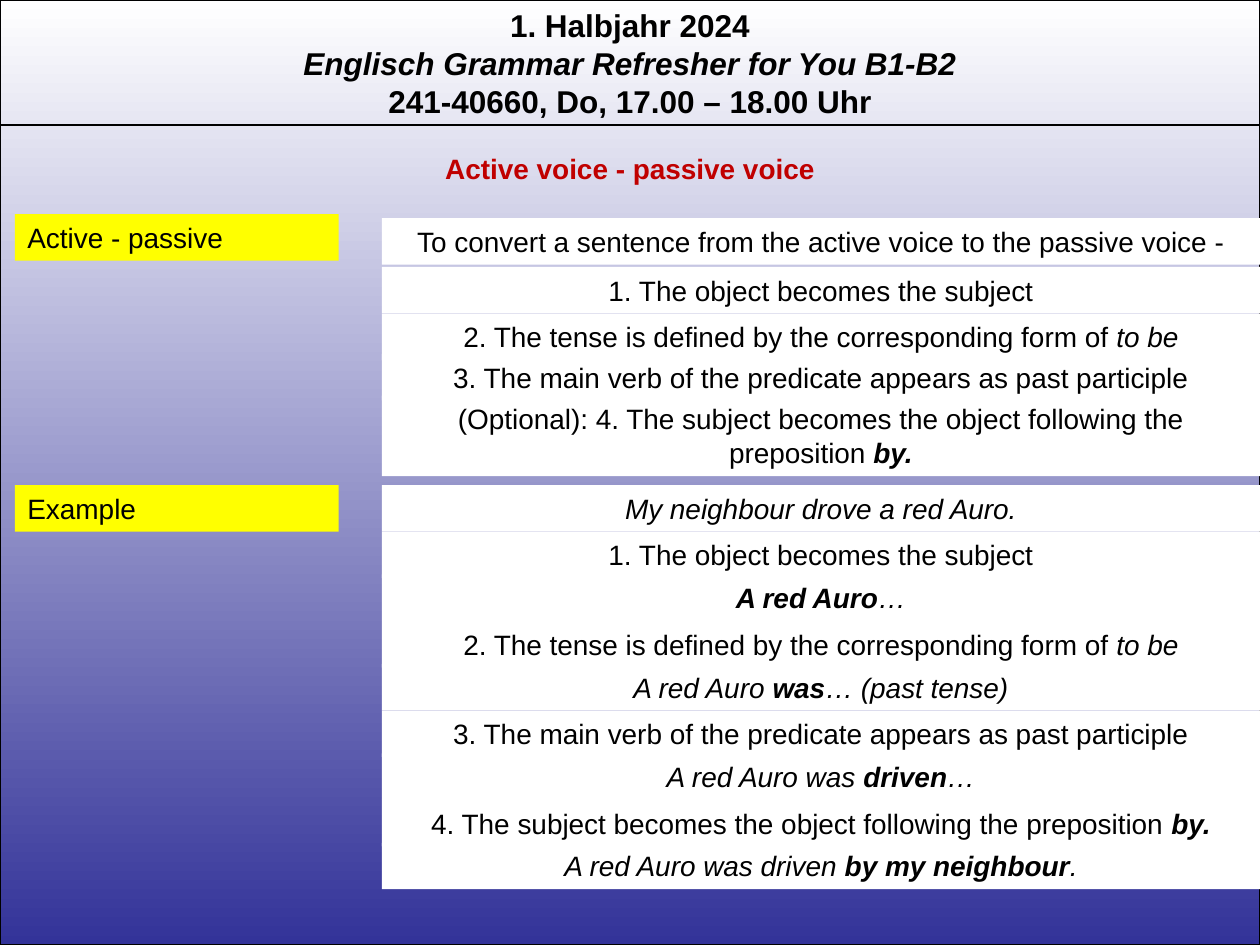
import pptx
import pptx.util
import pptx.dml.color
import pptx.enum.shapes
import pptx.enum.text
from lxml import etree

Pt = pptx.util.Pt
RGBColor = pptx.dml.color.RGBColor
Align = pptx.enum.text.PP_ALIGN

WHITE = RGBColor(0xFF, 0xFF, 0xFF)
BLACK = RGBColor(0, 0, 0)
BLUE = RGBColor(0x33, 0x33, 0x99)
RED = RGBColor(0xC0, 0, 0)
YELLOW = RGBColor(0xFF, 0xFF, 0)

WIDE, HIGH = 720, 540
ROW = 26.6
LEFT, SPAN = 218.2, 501.8
RULE = 71.4
DRAWING = "http://schemas.openxmlformats.org/drawingml/2006/main"


class Page:
    font = "Arial"
    size = 16

    def __init__(self, slide):
        self.slide = slide

    def ground(self, top, base):
        fill = self.slide.background.fill
        fill.gradient()
        fill.gradient_angle = 270
        for stop, color in zip(fill.gradient_stops, (top, base)):
            stop.color.rgb = color

    def put(self, frame, lines, align=Align.CENTER, size=None, color=BLACK):
        frame.word_wrap = True
        frame.vertical_anchor = pptx.enum.text.MSO_ANCHOR.TOP
        frame.auto_size = pptx.enum.text.MSO_AUTO_SIZE.SHAPE_TO_FIT_TEXT
        frame.margin_left = frame.margin_right = Pt(7.2)
        frame.margin_top = frame.margin_bottom = Pt(3.6)
        for at, line in enumerate(lines):
            para = frame.add_paragraph() if at else frame.paragraphs[0]
            para.alignment = align
            para.line_spacing = 1.0
            para.space_before = Pt(0)
            for text, style in line:
                run = para.add_run()
                run.text = text
                run.font.name = self.font
                run.font.size = Pt(size or self.size)
                run.font.color.rgb = color
                run.font.bold = "b" in style
                run.font.italic = "i" in style

    def title(self, text, top, high):
        shape = self.slide.shapes.title
        shape.left, shape.top = Pt(0), Pt(top)
        shape.width, shape.height = Pt(WIDE), Pt(high)
        self.put(shape.text_frame, [[(text, "b")]], color=RED)

    def header(self, lines, high):
        box = self.slide.shapes.add_textbox(Pt(0), Pt(0), Pt(WIDE), Pt(high))
        self.put(box.text_frame, lines, size=18)

    def rect(self, left, top, wide, high):
        shape = self.slide.shapes.add_shape(
            pptx.enum.shapes.MSO_SHAPE.RECTANGLE,
            Pt(left), Pt(top), Pt(wide), Pt(high))
        shape.shadow.inherit = False
        return shape

    def border(self):
        shape = self.rect(0, 0, WIDE, HIGH)
        shape.fill.background()
        shape.line.color.rgb = BLACK
        shape.line.width = Pt(0.75)

    def rule(self, top):
        line = self.slide.shapes.add_connector(
            pptx.enum.shapes.MSO_CONNECTOR.STRAIGHT,
            Pt(0), Pt(top), Pt(WIDE), Pt(top))
        line.line.color.rgb = BLACK
        line.line.width = Pt(0.75)
        props = line._element.spPr
        etree.SubElement(props, "{%s}effectLst" % DRAWING)

    def panel(self, left, top, wide, high, runs, fill, align):
        shape = self.rect(left, top, wide, high)
        shape.fill.solid()
        shape.fill.fore_color.rgb = fill
        shape.line.fill.background()
        self.put(shape.text_frame, [runs], align)

    def label(self, top, text):
        self.panel(8.6, top, 185, ROW, [(text, "")], YELLOW, Align.LEFT)

    def row(self, top, runs, high=ROW):
        self.panel(LEFT, top, SPAN, high, runs, WHITE, Align.CENTER)


def main():
    deck = pptx.Presentation()
    deck.slide_width, deck.slide_height = Pt(WIDE), Pt(HIGH)
    page = Page(deck.slides.add_slide(deck.slide_layouts[5]))

    page.ground(WHITE, BLUE)
    page.border()
    page.header([
        [("1. Halbjahr 2024", "b")],
        [("Englisch Grammar Refresher for You B1-B2", "bi")],
        [("241-40660, Do, 17.00 – 18.00 Uhr", "b")],
    ], 72.7)
    page.rule(RULE)
    page.title("Active voice - passive voice", 82.8, ROW)

    final = "The subject becomes the object following the preposition "
    steps = [
        [("1. The object becomes the subject", "")],
        [("2. The tense is defined by the corresponding form of ", ""),
         ("to be", "i")],
        [("3. The main verb of the predicate appears as past participle", "")],
    ]
    page.label(122.4, "Active - passive")
    page.row(124.6, [
        ("To convert a sentence from the active voice to the passive voice -", "")])
    for top, step in zip((152.6, 179.3, 202.3), steps):
        page.row(top, step)
    page.row(226.1, [("(Optional): 4. " + final, ""), ("by.", "bi")], 46)

    page.label(277.2, "Example")
    page.row(277.2, [("My neighbour drove a red Auro.", "i")])
    steps.append([("4. " + final, ""), ("by.", "bi")])
    forms = [
        [("A red Auro", "bi"), ("…", "i")],
        [("A red Auro ", "i"), ("was", "bi"), ("… (past tense)", "i")],
        [("A red Auro was ", "i"), ("driven", "bi"), ("…", "i")],
        [("A red Auro was driven ", "i"), ("by my neighbour", "bi"), (".", "i")],
    ]
    for at, (step, form) in enumerate(zip(steps, forms)):
        top = 303.8 + 51.1 * at
        page.row(top, step)
        page.row(top + 24.5, form)

    deck.save("out.pptx")


if __name__ == "__main__":
    main()
